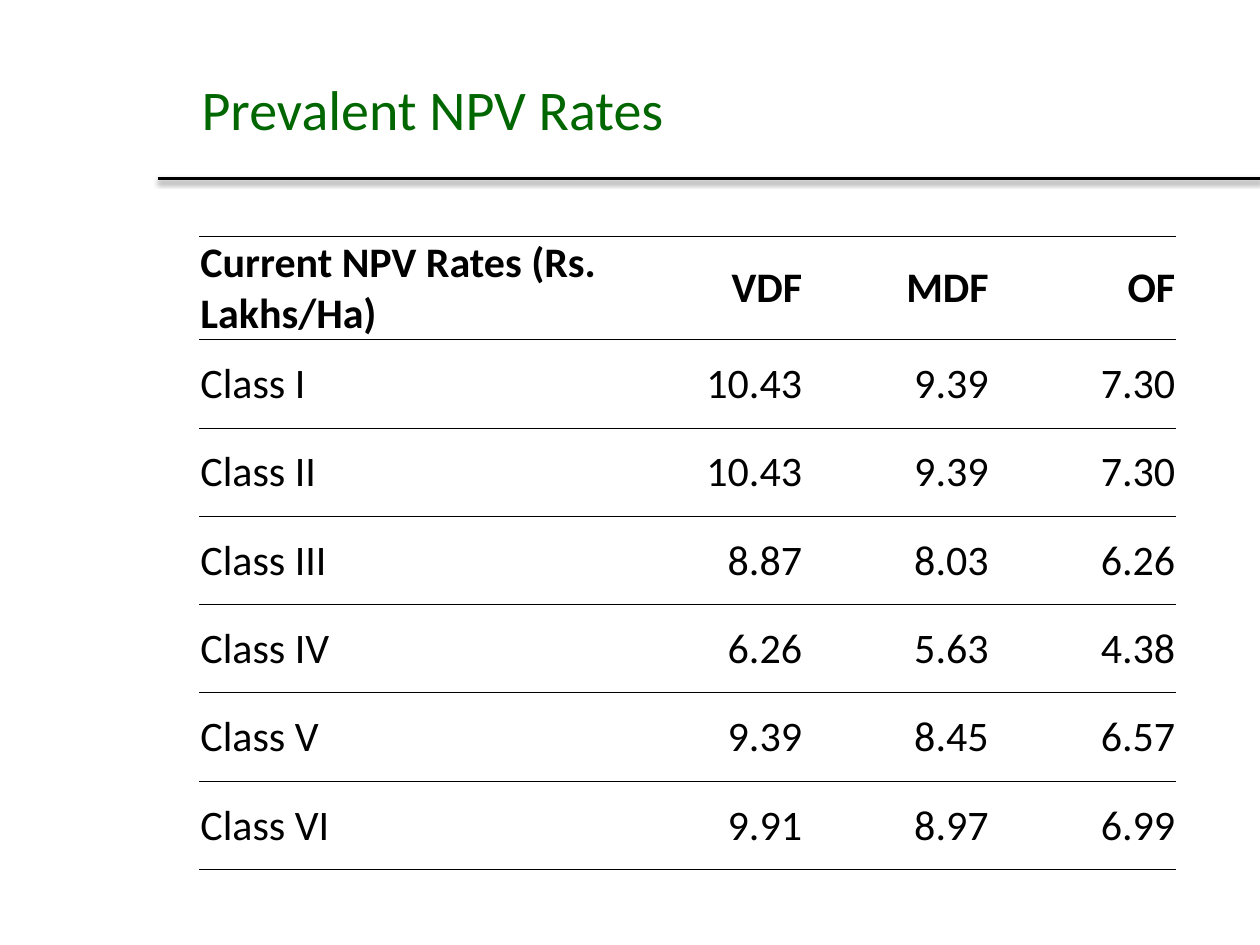
from dataclasses import dataclass

from lxml.etree import SubElement
from pptx import Presentation
from pptx.dml.color import RGBColor
from pptx.enum.shapes import MSO_CONNECTOR
from pptx.enum.text import MSO_ANCHOR, PP_ALIGN
from pptx.oxml import parse_xml
from pptx.oxml.ns import nsdecls, qn
from pptx.util import Cm, Pt


@dataclass(frozen=True)
class Theme:
    face: str = "Calibri"
    green: RGBColor = RGBColor(0x00, 0x66, 0x00)
    black: RGBColor = RGBColor(0x00, 0x00, 0x00)
    head: Pt = Pt(32)
    body: Pt = Pt(24)
    rule: Pt = Pt(2)
    edge: Pt = Pt(0.5)


theme = Theme()


def apply(item, values):
    for name, value in values.items():
        setattr(item, name, value)


def style(par, size, color, bold, align):
    par.alignment = align
    apply(par.font, {"name": theme.face, "size": size, "bold": bold})
    par.font.color.rgb = color


deck = Presentation()
apply(deck, {"slide_width": Cm(25.4), "slide_height": Cm(19.05)})
slide = deck.slides.add_slide(deck.slide_layouts[5])

title = slide.shapes.title
apply(title, {"left": Cm(3.81), "top": Cm(0.76),
              "width": Cm(20.75), "height": Cm(2.84)})
title.text_frame.text = "Prevalent NPV Rates"
title.text_frame.vertical_anchor = MSO_ANCHOR.MIDDLE
style(title.text_frame.paragraphs[0], theme.head, theme.green, False, PP_ALIGN.LEFT)

rule = slide.shapes.add_connector(
    MSO_CONNECTOR.STRAIGHT, Cm(3.18), Cm(3.6), deck.slide_width, Cm(3.6))
rule.line.width = theme.rule
rule.line.color.rgb = theme.black
glow = SubElement(rule.element.spPr, qn("a:effectLst"))
glow.append(parse_xml(
    f'<a:outerShdw {nsdecls("a")} blurRad="{Pt(3.1)}" dist="{Pt(1.6)}" '
    f'dir="5400000" rotWithShape="0"><a:srgbClr val="{theme.black}">'
    '<a:alpha val="38000"/></a:srgbClr></a:outerShdw>'))
title.element.addprevious(rule.element)

rows = [
    ("Current NPV Rates (Rs. Lakhs/Ha)", "VDF", "MDF", "OF"),
    ("Class I", "10.43", "9.39", "7.30"),
    ("Class II", "10.43", "9.39", "7.30"),
    ("Class III", "8.87", "8.03", "6.26"),
    ("Class IV", "6.26", "5.63", "4.38"),
    ("Class V", "9.39", "8.45", "6.57"),
    ("Class VI", "9.91", "8.97", "6.99"),
]
wide = [Cm(8.41)] + [Cm(3.76)] * 3
tall = Cm(1.78)
table = slide.shapes.add_table(
    len(rows), len(wide), Cm(4.02), Cm(4.76), sum(wide), tall * len(rows)).table
apply(table, {"first_row": False, "horz_banding": False})
for col, width in zip(table.columns, wide):
    col.width = width

for r, row in enumerate(rows):
    table.rows[r].height = tall
    for c, text in enumerate(row):
        cell = table.cell(r, c)
        apply(cell, {"text": text, "vertical_anchor": MSO_ANCHOR.MIDDLE,
                     "margin_left": Cm(0.02), "margin_right": Cm(0.02),
                     "margin_top": Cm(0.02), "margin_bottom": 0})
        cell.fill.background()
        style(cell.text_frame.paragraphs[0], theme.body, theme.black, r == 0,
              PP_ALIGN.RIGHT if c else PP_ALIGN.LEFT)
        ink = f'<a:solidFill><a:srgbClr val="{theme.black}"/></a:solidFill>'
        for n, side in enumerate("LRTB"):
            fill = ink if side in "TB" else "<a:noFill/>"
            cell._tc.tcPr.insert(n, parse_xml(
                f'<a:ln{side} {nsdecls("a")} w="{theme.edge}">{fill}</a:ln{side}>'))

deck.save("out.pptx")
